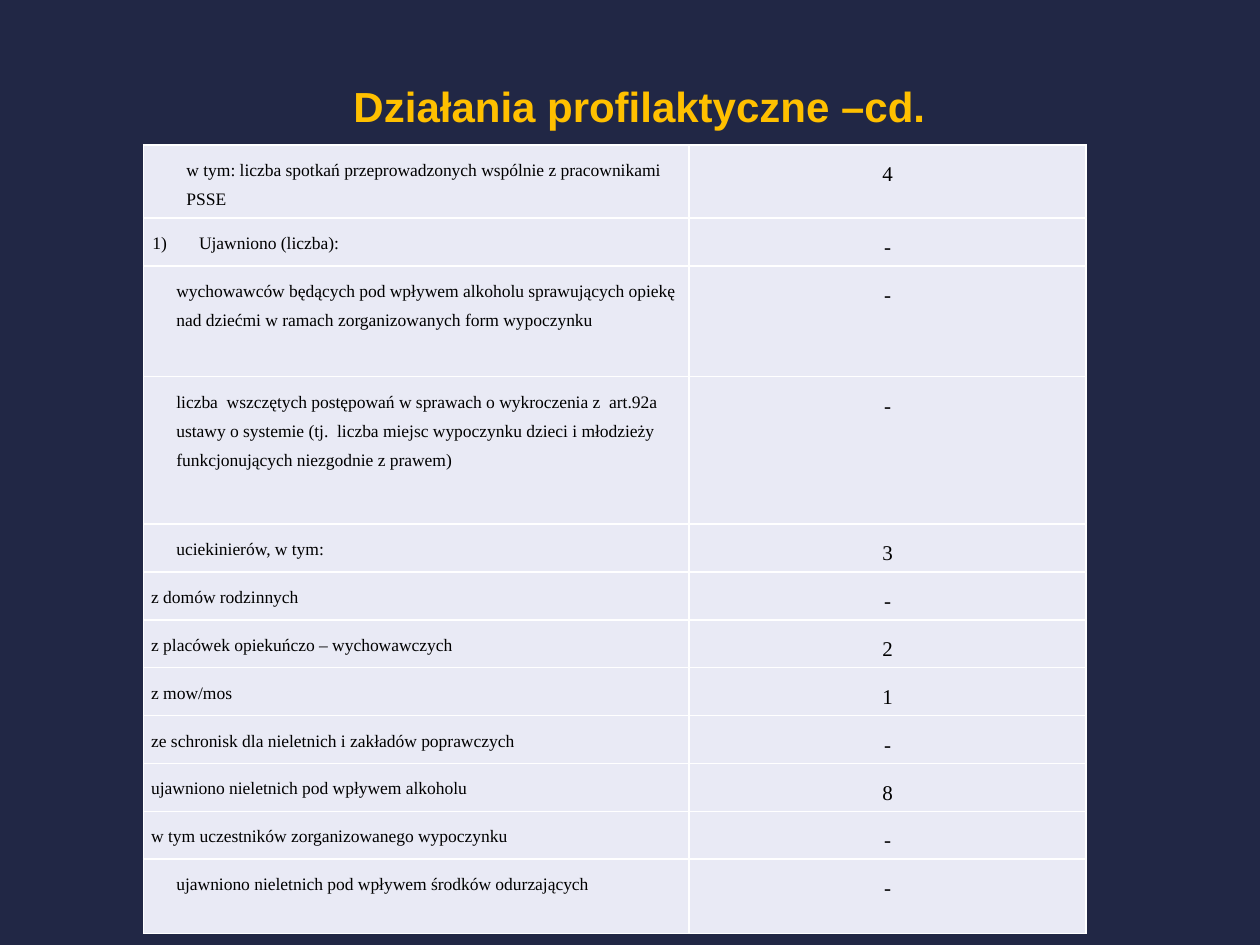
from dataclasses import dataclass

from pptx import Presentation
from pptx.dml.color import RGBColor
from pptx.enum.text import MSO_ANCHOR, MSO_AUTO_SIZE, PP_ALIGN as Align
from pptx.oxml import parse_xml
from pptx.oxml.ns import nsdecls
from pptx.util import Inches, Pt

NAVY = RGBColor(0x21, 0x27, 0x45)
GOLD = RGBColor(0xFF, 0xC0, 0x00)
LAVENDER = RGBColor(0xE9, 0xEA, 0xF5)
WHITE = RGBColor(0xFF, 0xFF, 0xFF)
BLACK = RGBColor(0x00, 0x00, 0x00)

TITLE_ONLY = 5
COLUMNS = (4.33, 3.15)
LINE = 0.38
BORDER = Pt(0.96)


@dataclass(frozen=True)
class Row:
    label: str
    value: str = "-"
    height: float = LINE
    indent: float = 0
    numbered: bool = False


ROWS = (
    Row("w tym: liczba spotkań przeprowadzonych wspólnie z pracownikami PSSE", "4", 0.58, 0.28),
    Row("Ujawniono (liczba):", indent=0.38, numbered=True),
    Row("wychowawców będących pod wpływem alkoholu sprawujących opiekę nad dziećmi "
        "w ramach zorganizowanych form wypoczynku", height=0.88, indent=0.2),
    Row("liczba  wszczętych postępowań w sprawach o wykroczenia z  art.92a ustawy o systemie "
        "(tj.  liczba miejsc wypoczynku dzieci i młodzieży funkcjonujących niezgodnie z prawem)",
        height=1.17, indent=0.2),
    Row("uciekinierów, w tym:", "3", indent=0.2),
    Row("z domów rodzinnych"),
    Row("z placówek opiekuńczo – wychowawczych", "2"),
    Row("z mow/mos", "1"),
    Row("ze schronisk dla nieletnich i zakładów poprawczych"),
    Row("ujawniono nieletnich pod wpływem alkoholu", "8"),
    Row("w tym uczestników zorganizowanego wypoczynku"),
    Row("ujawniono nieletnich pod wpływem środków odurzających", height=0.59, indent=0.2),
)


def assign(obj, values: dict) -> None:
    for name, value in values.items():
        setattr(obj, name, value)


def add_borders(cell) -> None:
    tc_pr = cell._tc.get_or_add_tcPr()
    for i, side in enumerate(("lnL", "lnR", "lnT", "lnB")):
        tc_pr.insert(i, parse_xml(
            f'<a:{side} {nsdecls("a")} w="{BORDER}"><a:solidFill>'
            f'<a:srgbClr val="{WHITE}"/></a:solidFill></a:{side}>'))


def add_number(p) -> None:
    p_pr = p._p.get_or_add_pPr()
    p_pr.set("indent", str(Inches(-0.37)))
    for xml in (f'<a:buClr {nsdecls("a")}><a:srgbClr val="{BLACK}"/></a:buClr>',
                f'<a:buFont {nsdecls("a")} typeface="Times New Roman"/>',
                f'<a:buAutoNum {nsdecls("a")} type="arabicParenR"/>',
                f'<a:tabLst {nsdecls("a")}><a:tab pos="{Inches(0.5)}" algn="l"/></a:tabLst>'):
        p_pr.append(parse_xml(xml))


def fill_cell(cell, text: str, size: int, align: Align, indent: float = 0):
    assign(cell, {"margin_left": Inches(0.06), "margin_right": Inches(0.06),
                  "margin_top": Inches(0.05), "margin_bottom": Inches(0.05)})
    cell.fill.solid()
    cell.fill.fore_color.rgb = LAVENDER
    add_borders(cell)
    p = cell.text_frame.paragraphs[0]
    assign(p, {"alignment": align, "line_spacing": 1.5, "space_before": Pt(6)})
    p._p.get_or_add_pPr().set("marL", str(Inches(indent)))
    r = p.add_run()
    r.text = text
    assign(r.font, {"name": "Times New Roman", "size": Pt(size), "bold": False})
    r.font.color.rgb = BLACK
    return p


def add_title(slide, text: str) -> None:
    sp = slide.shapes.title
    assign(sp, {"left": Inches(0.43), "top": Inches(0.3),
                "width": Inches(9.29), "height": Inches(1.25)})
    tf = sp.text_frame
    assign(tf, {"auto_size": MSO_AUTO_SIZE.NONE, "word_wrap": True,
                "vertical_anchor": MSO_ANCHOR.MIDDLE, "margin_bottom": Inches(0.22)})
    p = tf.paragraphs[0]
    p.alignment = Align.CENTER
    r = p.add_run()
    r.text = text
    assign(r.font, {"name": "Arial", "size": Pt(24), "bold": True})
    r.font.color.rgb = GOLD


def add_results(slide, rows: tuple[Row, ...]) -> None:
    table = slide.shapes.add_table(
        len(rows), len(COLUMNS), Inches(1.14), Inches(1.15),
        Inches(sum(COLUMNS)), Inches(sum(row.height for row in rows))).table
    assign(table, {"first_row": False, "horz_banding": False})
    for column, width in zip(table.columns, COLUMNS):
        column.width = Inches(width)
    for i, row in enumerate(rows):
        table.rows[i].height = Inches(row.height)
        align = Align.JUSTIFY if row.numbered else Align.LEFT
        p = fill_cell(table.cell(i, 0), row.label, 10, align, row.indent)
        if row.numbered:
            add_number(p)
        fill_cell(table.cell(i, 1), row.value, 12, Align.CENTER)


def main() -> None:
    prs = Presentation()
    assign(prs, {"slide_width": Inches(10), "slide_height": Inches(7.5)})
    slide = prs.slides.add_slide(prs.slide_layouts[TITLE_ONLY])
    slide.background.fill.solid()
    slide.background.fill.fore_color.rgb = NAVY
    add_title(slide, "Działania profilaktyczne –cd.")
    add_results(slide, ROWS)
    prs.save("out.pptx")


if __name__ == "__main__":
    main()
